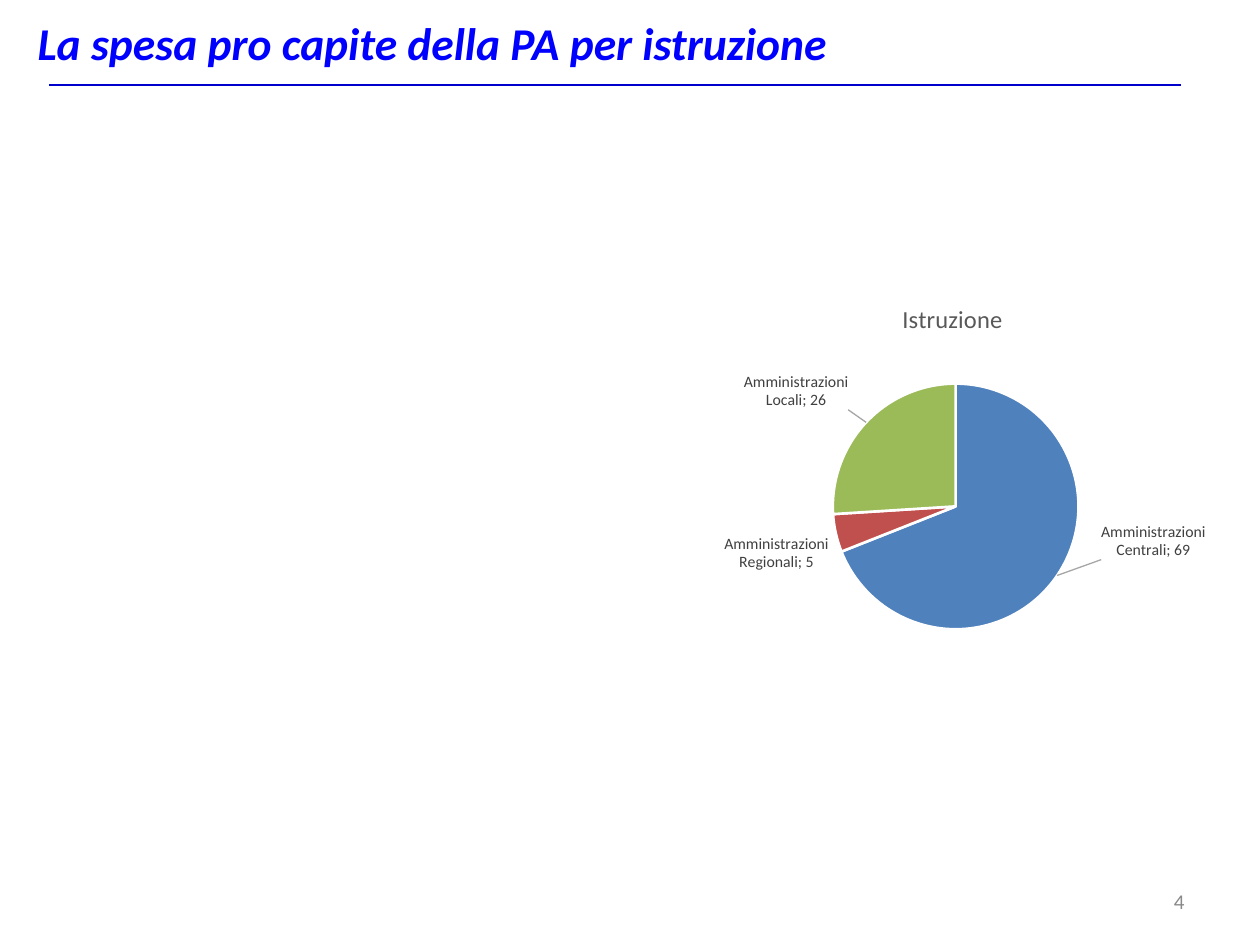
import dataclasses
import pptx
import pptx.chart.data
import pptx.dml.color
import pptx.enum.chart
import pptx.enum.shapes
import pptx.enum.text
import pptx.oxml
import pptx.oxml.ns
import pptx.util

WIDE, HIGH = 10, 7.5
FACE = "Calibri"
HUES = {
    "title": "0000FF", "rule": "0000CC", "page": "898989", "head": "595959",
    "label": "404040", "lead": "A6A6A6", "edge": "FFFFFF", "base": "000000",
}
ALIGN = pptx.enum.text.PP_ALIGN
OUTER = pptx.enum.chart.XL_LABEL_POSITION.OUTSIDE_END


@dataclasses.dataclass
class Box:
    left: float
    top: float
    width: float
    height: float

    def place(self) -> list:
        sides = (self.left * WIDE, self.top * HIGH, self.width * WIDE, self.height * HIGH)
        return [pptx.util.Inches(side) for side in sides]


@dataclasses.dataclass
class Note:
    text: str
    box: Box
    size: float
    hue: str
    align: object
    strong: bool = False


@dataclasses.dataclass
class Slice:
    name: str
    value: int
    fill: str
    shift: tuple = ()


NOTES = [
    Note("La spesa pro capite della PA per istruzione", Box(0.02, 0, 0.93, 0.09),
         26, "title", ALIGN.LEFT, True),
    Note("4", Box(0.717, 0.927, 0.233, 0.053), 12, "page", ALIGN.RIGHT),
]
SLICES = [
    Slice("Amministrazioni Centrali", 69, "4F81BD", (0.06, -0.15)),
    Slice("Amministrazioni Regionali", 5, "C0504D"),
    Slice("Amministrazioni Locali", 26, "9BBB59", (-0.02, -0.02)),
]


def tint(code: str):
    return pptx.dml.color.RGBColor.from_string(code)


def style(font, size: float, hue: str, strong: bool = False) -> None:
    font.name = FACE
    font.size = pptx.util.Pt(size)
    font.bold = font.italic = strong
    font.color.rgb = tint(HUES[hue])


def node(body: str):
    spaces = pptx.oxml.ns.nsdecls("c", "a")
    tag, rest = body[1:].split(">", 1)
    return pptx.oxml.parse_xml(f"<{tag} {spaces}>{rest}")


def layout(**parts):
    rows = "".join(f'<c:{key} val="{val}"/>' for key, val in parts.items())
    return node(f"<c:layout><c:manualLayout>{rows}</c:manualLayout></c:layout>")


def find(root, tag: str):
    return root.find(pptx.oxml.ns.qn(tag))


def split(root) -> None:
    mark = node("<c:separator>; </c:separator>")
    find(root, "c:showBubbleSize").addnext(mark)


def write(slide, note: Note) -> None:
    frame = slide.shapes.add_textbox(*note.box.place()).text_frame
    frame.word_wrap = True
    frame.vertical_anchor = pptx.enum.text.MSO_ANCHOR.MIDDLE
    para = frame.paragraphs[0]
    para.text = note.text
    para.alignment = note.align
    style(para.font, note.size, note.hue, note.strong)


def rule(slide, left: float, right: float, level: float) -> None:
    start, end = (pptx.util.Inches(x * WIDE) for x in (left, right))
    height = pptx.util.Inches(level * HIGH)
    line = slide.shapes.add_connector(
        pptx.enum.shapes.MSO_CONNECTOR.STRAIGHT, start, height, end, height)
    line.line.color.rgb = tint(HUES["rule"])
    line.line.width = pptx.util.Pt(0.75)
    line._element.spPr.append(node("<a:effectLst></a:effectLst>"))


def label(series) -> None:
    tags = series.data_labels
    tags.show_value = tags.show_category_name = True
    tags.number_format, tags.number_format_is_linked = "0", False
    tags.position = OUTER
    style(tags.font, 9, "label")
    split(tags._element)
    tags._element.append(node(
        '<c:leaderLines><c:spPr><a:ln w="9525"><a:solidFill>'
        f'<a:srgbClr val="{HUES["lead"]}"/>'
        "</a:solidFill></a:ln></c:spPr></c:leaderLines>"))


def move(point, shift: tuple) -> None:
    tag = point.data_label
    style(tag.font, 9, "label")
    tag.position = OUTER
    root = tag._dLbl
    find(root, "c:showCatName").set("val", "1")
    find(root, "c:idx").addnext(layout(x=shift[0], y=shift[1]))
    split(root)


def pie(slide, box: Box, name: str, slices: list) -> None:
    data = pptx.chart.data.CategoryChartData(number_format="0")
    data.categories = [part.name for part in slices]
    data.add_series(name, [part.value for part in slices])
    kind = pptx.enum.chart.XL_CHART_TYPE.PIE
    chart = slide.shapes.add_chart(kind, *box.place(), data).chart
    style(chart.font, 10, "base")
    chart.has_legend = False
    chart.has_title = True
    chart.chart_title.include_in_layout = False
    para = chart.chart_title.text_frame.paragraphs[0]
    para.text = name
    style(para.font, 14, "head")
    plot = chart.plots[0]
    plot.vary_by_categories = True
    area = chart._chartSpace.chart.plotArea
    old = find(area, "c:layout")
    if old is not None:
        area.remove(old)
    area.insert(0, layout(layoutTarget="inner", xMode="edge", yMode="edge",
                          x=0.31, y=0.26, w=0.39, h=0.66))
    series = plot.series[0]
    label(series)
    for index, part in enumerate(slices):
        point = series.points[index]
        point.format.fill.solid()
        point.format.fill.fore_color.rgb = tint(part.fill)
        point.format.line.color.rgb = tint(HUES["edge"])
        point.format.line.width = pptx.util.Pt(1.5)
        if part.shift:
            move(point, part.shift)


def main() -> None:
    deck = pptx.Presentation()
    deck.slide_width = pptx.util.Inches(WIDE)
    deck.slide_height = pptx.util.Inches(HIGH)
    slide = deck.slides.add_slide(deck.slide_layouts[6])
    for note in NOTES:
        write(slide, note)
    rule(slide, 0.039, 0.937, 0.09)
    pie(slide, Box(0.506, 0.3, 0.5, 0.4), "Istruzione", SLICES)
    deck.save("out.pptx")


if __name__ == "__main__":
    main()
